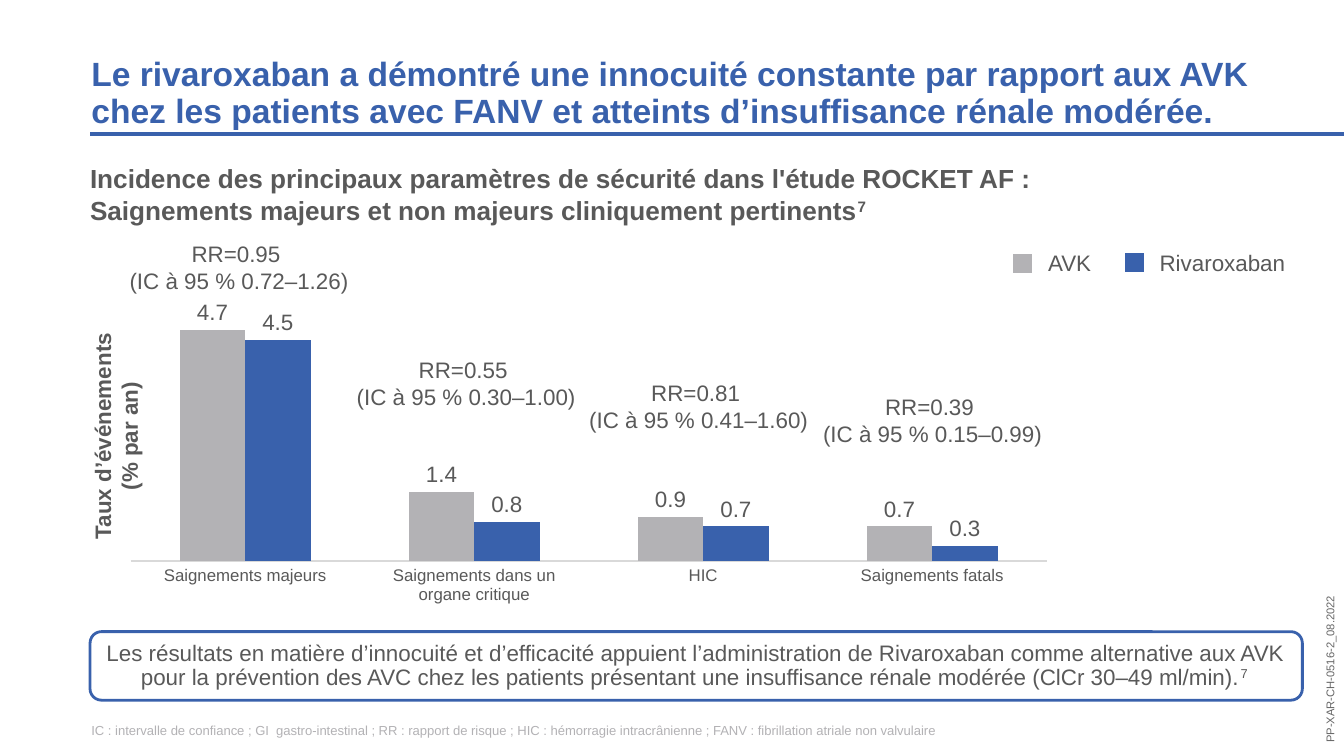
from lxml import etree
from pptx import Presentation
from pptx import util as u
from pptx.chart import data
from pptx.dml.color import RGBColor
from pptx.enum import chart as ch, shapes, text
from pptx.oxml import ns, parse_xml

BLUE = RGBColor(0x39, 0x61, 0xAC)
GRAY = RGBColor(0xB3, 0xB2, 0xB5)
DARK = RGBColor(0x59, 0x59, 0x59)
CODE = RGBColor(0x66, 0x66, 0x66)
AXIS = RGBColor(0xD9, 0xD9, 0xD9)
FONT = "Arial"
LEFT, MID = text.PP_ALIGN.LEFT, text.PP_ALIGN.CENTER
TOP, CENTER, BOTTOM = (text.MSO_ANCHOR.TOP, text.MSO_ANCHOR.MIDDLE,
                       text.MSO_ANCHOR.BOTTOM)

prs = Presentation()
prs.slide_width = u.Inches(10)
prs.slide_height = prs.slide_width * 9 // 16
slide = prs.slides.add_slide(prs.slide_layouts[6])
items = slide.shapes


def write(box, words, size, color=DARK, bold=False, align=LEFT, anchor=TOP,
          inset=True, note=""):
    """Fill a shape with one paragraph and an optional superscript."""
    frame = box.text_frame
    frame.word_wrap = True
    frame.vertical_anchor = anchor
    if not inset:
        frame.margin_left = frame.margin_right = 0
        frame.margin_top = frame.margin_bottom = 0
    para = frame.paragraphs[0]
    para.text = words
    para.alignment = align
    if note:
        mark = para.add_run()
        mark.text = note
        mark._r.get_or_add_rPr().set("baseline", "30000")
    for run in para.runs:
        font = run.font
        font.name, font.size, font.bold = FONT, u.Pt(size), bold
        font.color.rgb = color
    return para


def add_text(place, words, size, **style):
    """Add a text box at left, top, width, height in inches."""
    box = items.add_textbox(*map(u.Inches, place))
    write(box, words, size, **style)
    return box


# Title with its rule
title = add_text(
    (0.68, 0.42, 9.05, 0.55),
    "Le rivaroxaban a démontré une innocuité constante par rapport aux AVK "
    "chez les patients avec FANV et atteints d’insuffisance rénale modérée.",
    18, color=BLUE, bold=True, anchor=BOTTOM, inset=False)
title.text_frame.paragraphs[0].line_spacing = 0.9
rule = items.add_connector(shapes.MSO_CONNECTOR.STRAIGHT, u.Inches(0.67),
                           u.Inches(1), u.Inches(10), u.Inches(1))
rule.line.color.rgb = BLUE
rule.line.width = u.Pt(2.25)
etree.SubElement(rule._element.spPr, ns.qn("a:effectLst"))

# Subtitle
add_text((0.67, 1.21, 9.06, 0.75),
         "Incidence des principaux paramètres de sécurité dans l'étude "
         "ROCKET AF : \n"
         "Saignements majeurs et non majeurs cliniquement pertinents",
         14, bold=True, inset=False, note="7")

# Bar chart
rates = data.CategoryChartData()
rates.categories = ["Saignements majeurs", "Saignements dans un organe critique",
                    "HIC", "Saignements fatals"]
rates.add_series("Series 1", (4.7, 1.4, 0.9, 0.7))
rates.add_series("Series 2", (4.5, 0.8, 0.7, 0.3))
chart = items.add_chart(ch.XL_CHART_TYPE.COLUMN_CLUSTERED, u.Inches(0.83),
                        u.Inches(2.24), u.Inches(7.1), u.Inches(2.3),
                        rates).chart
chart.has_legend = chart.has_title = False
chart.font.name, chart.font.size = FONT, u.Pt(10)
plot = chart.plots[0]
plot.gap_width, plot.overlap = 150, 0
plot.vary_by_categories = False
for bars, color in zip(plot.series, (GRAY, BLUE)):
    bars.format.fill.solid()
    bars.format.fill.fore_color.rgb = color
    tags = bars.data_labels
    tags.show_value = True
    tags.position = ch.XL_LABEL_POSITION.OUTSIDE_END
    tags.number_format, tags.number_format_is_linked = "0.0", False
    tags.font.name, tags.font.size = FONT, u.Pt(12)
    tags.font.color.rgb = DARK

# Chart axes
values = chart.value_axis
values.minimum_scale, values.maximum_scale = 0, 5
values.has_major_gridlines = False
values.visible = False
groups = chart.category_axis
groups.major_tick_mark = ch.XL_TICK_MARK.NONE
groups.format.line.color.rgb = AXIS
groups.format.line.width = u.Pt(0.75)
labels = groups.tick_labels.font
labels.name, labels.size = FONT, u.Pt(9)
labels.color.rgb = DARK

# Fixed plot area inside the chart frame
area = chart._chartSpace.chart.plotArea
for old in area.findall(ns.qn("c:layout")):
    area.remove(old)
area.insert(0, parse_xml(
    f'<c:layout {ns.nsdecls("c")}><c:manualLayout>'
    '<c:layoutTarget val="inner"/><c:xMode val="edge"/><c:yMode val="edge"/>'
    '<c:x val="0.02"/><c:y val="0.04"/><c:w val="0.96"/><c:h val="0.8"/>'
    '</c:manualLayout></c:layout>'))

# Axis title
side = add_text((-0.09, 2.99, 1.9, 0.51), "Taux d’événements\n(% par an)", 12,
                bold=True, align=MID, anchor=CENTER)
side.rotation = 270

# Risk ratios above the bars
for left, top, ratio, span in [(0.8, 1.74, "0.95", " 0.72–1.26"),
                               (2.49, 2.6, "0.55", " 0.30–1.00"),
                               (4.22, 2.77, "0.81", " 0.41–1.60"),
                               (5.96, 2.88, "0.39", " 0.15–0.99")]:
    add_text((left, top, 1.96, 0.5), f"RR={ratio} \n(IC à 95 %{span})", 12,
             align=MID)

# Legend
for left, top, width, name, color in [(7.55, 1.9, 0.54, "AVK", GRAY),
                                      (8.38, 1.89, 1.14, "Rivaroxaban", BLUE)]:
    key = items.add_shape(shapes.MSO_SHAPE.RECTANGLE, u.Inches(left),
                          u.Inches(top), u.Inches(0.12), u.Inches(0.12))
    key.shadow.inherit = False
    key.fill.solid()
    key.fill.fore_color.rgb = key.line.color.rgb = color
    key.line.width = u.Pt(1.5)
    etree.SubElement(key.line._get_or_add_ln(), ns.qn("a:miter"), lim="800000")
    label = add_text((left + 0.15, 1.8, width, 0.31), name, 12, anchor=CENTER)
    label.text_frame.word_wrap = False

# Conclusion
panel = items.add_shape(shapes.MSO_SHAPE.ROUNDED_RECTANGLE, u.Inches(0.67),
                        u.Inches(4.7), u.Inches(9.02), u.Inches(0.51))
panel.shadow.inherit = False
panel.fill.background()
panel.line.color.rgb = BLUE
panel.line.width = u.Pt(1.5)
para = write(
    panel,
    "Les résultats en matière d’innocuité et d’efficacité appuient "
    "l’administration de Rivaroxaban comme alternative aux AVK pour la "
    "prévention des AVC chez les patients présentant une insuffisance rénale "
    "modérée (ClCr 30–49 ml/min).",
    12, align=MID, anchor=CENTER, inset=False, note="7 ")
para.line_spacing = 0.9

# Abbreviations and document code
add_text((0.68, 5.25, 9.05, 0.24),
         "IC : intervalle de confiance ; GI  gastro-intestinal ; RR : rapport "
         "de risque ; HIC : hémorragie intracrânienne ; FANV : fibrillation "
         "atriale non valvulaire",
         7, color=GRAY, anchor=BOTTOM, inset=False)
code = add_text((9.24, 4.87, 1.31, 0.2), "PP-XAR-CH-0516-2_08.2022", 6,
                color=CODE, anchor=CENTER)
code.rotation = 270
code.text_frame.word_wrap = False

prs.save("out.pptx")
